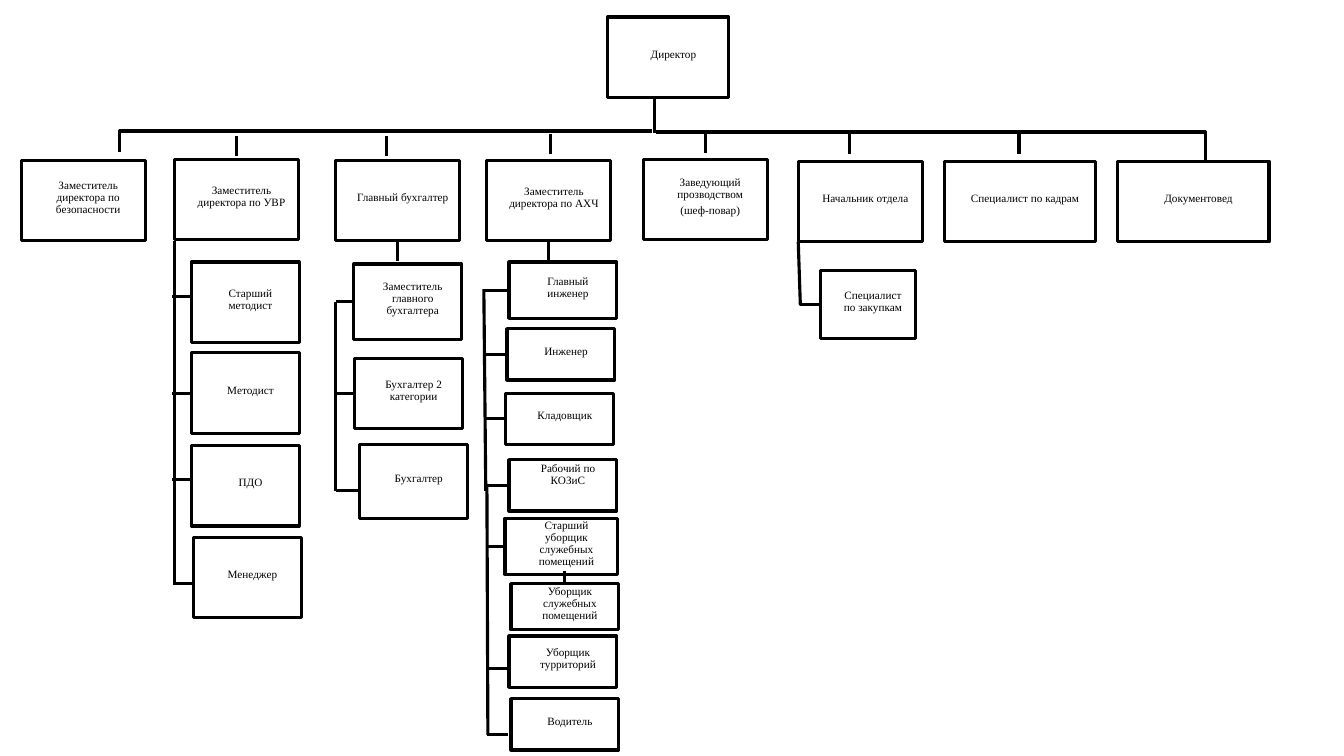
from lxml import etree
from pptx import Presentation
from pptx.dml.color import RGBColor
from pptx.enum.shapes import MSO_CONNECTOR, MSO_SHAPE
from pptx.enum.text import MSO_ANCHOR, PP_ALIGN
from pptx.oxml.ns import qn
from pptx.util import Pt

RECT = MSO_SHAPE.RECTANGLE
STRAIGHT, ELBOW = MSO_CONNECTOR.STRAIGHT, MSO_CONNECTOR.ELBOW
MIDDLE, CENTER = MSO_ANCHOR.MIDDLE, PP_ALIGN.CENTER
TOP, LEFT, BOTTOM = 0, 1, 2
COLORS = {"paper": "FFFFFF", "ink": "000000"}


def color(name):
    return RGBColor.from_string(COLORS[name])


def write(tf, text, font="Times New Roman", size=8, ink="ink", leading=0.9, after=2.8):
    for i, words in enumerate(text.split("\n")):
        p = tf.add_paragraph() if i else tf.paragraphs[0]
        p.alignment = CENTER
        p.line_spacing = leading
        p.space_after = Pt(after)
        r = p.add_run()
        r.text = words
        r.font.name = font
        r.font.size = Pt(size)
        r.font.color.rgb = color(ink)


class OrgChart:
    """Draws the boxes and lines of an organisation chart on one slide."""

    weight = 2.25

    def __init__(self, slide):
        self.s = slide

    def box(self, text, x, y, w, h, bottom=4.3):
        sp = self.s.shapes.add_shape(RECT, Pt(x), Pt(y), Pt(w), Pt(h))
        sp.shadow.inherit = False
        sp.fill.solid()
        sp.fill.fore_color.rgb = color("paper")
        sp.line.color.rgb = color("ink")
        sp.line.width = Pt(self.weight)
        tf = sp.text_frame
        tf.word_wrap = True
        tf.vertical_anchor = MIDDLE
        tf.margin_left, tf.margin_right = Pt(14.4), Pt(7.2)
        tf.margin_top, tf.margin_bottom = Pt(0.7), Pt(bottom)
        write(tf, text)
        return sp

    def line(self, x1, y1, x2, y2, kind=STRAIGHT):
        c = self.s.shapes.add_connector(kind, Pt(x1), Pt(y1), Pt(x2), Pt(y2))
        c.line.color.rgb = color("ink")
        c.line.width = Pt(self.weight)
        etree.SubElement(c._element.spPr, qn("a:effectLst"))
        return c

    def elbow(self, x1, y1, x2, y2, bend):
        c = self.line(x1, y1, x2, y2, ELBOW)
        geom = c._element.spPr.find(qn("a:prstGeom"))
        guides = geom.find(qn("a:avLst"))
        if guides is None:
            guides = etree.SubElement(geom, qn("a:avLst"))
        etree.SubElement(guides, qn("a:gd"), name="adj1", fmla=f"val {bend}")

    def twig(self, x, sp):
        y = (sp.top + sp.height / 2) / Pt(1)
        self.line(x, y, sp.left / Pt(1), y).end_connect(sp, LEFT)

    def stem(self, sp, length):
        x = (sp.left + sp.width / 2) / Pt(1)
        y = (sp.top + sp.height) / Pt(1)
        self.line(x, y, x, y + length).begin_connect(sp, BOTTOM)


def main():
    prs = Presentation()
    prs.slide_width, prs.slide_height = Pt(960), Pt(540)
    chart = OrgChart(prs.slides.add_slide(prs.slide_layouts[6]))

    chart.box("Директор", 434.2, 12.2, 86.4, 57.6)
    heads = [
        ("Заместитель директора по безопасности", 15.1, 114.5, 88.6),
        ("Заместитель директора по УВР", 124.6, 113.8, 88.6),
        ("Главный бухгалтер", 239.8, 114.5, 88.6),
        ("Заместитель директора по АХЧ", 347.8, 114.5, 88.6),
        ("Заведующий прозводством\n(шеф-повар)", 459.4, 113.8, 88.6),
        ("Начальник отдела", 570.2, 115.2, 88.6),
        ("Специалист по кадрам", 674.6, 115.2, 108),
        ("Документовед", 798.5, 115.2, 108),
    ]
    _, _, accountant, facilities, *_ = [chart.box(*head, 57.6) for head in heads]

    staff = [
        ("Старший методист", 136.8, 187.2, 77, 57.6),
        ("Методист", 136.8, 252, 77, 57.6),
        ("ПДО", 136.8, 318.2, 77, 57.6),
        ("Менеджер", 138.2, 383.8, 77, 57.6),
        ("Заместитель главного бухгалтера", 252.7, 188.6, 77, 54),
        ("Бухгалтер 2 категории", 253.4, 256.3, 77, 49.7),
        ("Бухгалтер", 257, 317.5, 77, 52.6),
        ("Главный инженер", 363.6, 187.2, 77, 40.3),
        ("Инженер", 362.2, 234.7, 77, 36.7),
        ("Кладовщик", 361.4, 280.8, 77, 36.7),
        ("Рабочий по КОЗиС", 363.6, 328.3, 77, 36.7, 15.3),
        ("Старший уборщик служебных помещений", 360.7, 370.1, 80.6, 40.3),
        ("Уборщик служебных помещений", 365, 416.9, 77, 33.1),
        ("Уборщик турриторий", 363.6, 454.3, 77, 36.7),
        ("Водитель", 365, 499, 77, 36.7),
        ("Специалист по закупкам", 586.1, 193, 67.7, 49),
    ]
    boxes = {person[0]: chart.box(*person) for person in staff}

    chart.line(467.3, 95, 467.3, 69.8)
    chart.elbow(465.8, 93.6, 85.7, 108.7, 100000)
    chart.elbow(468.7, 94.3, 859.7, 114.5, 100300)
    drops = [(169.2, 97.2), (275.8, 97.2), (393.1, 95.8),
             (504, 95), (607, 95.8), (727.9, 95.8)]
    for x, y in drops:
        chart.line(x, y, x, y + 14.4)

    spines = [
        (124.6, 172.1, 124.6, 416.9),
        (239.8, 215.6, 239.8, 350.6),
        (345.6, 206.6, 347, 350.6),
        (347.8, 345.6, 348.5, 524.9),
        (570.2, 172.8, 571.7, 218.2),
    ]
    for spine in spines:
        chart.line(*spine)

    twigs = [
        ("Методист", 123.1),
        ("Заместитель главного бухгалтера", 239.8),
        ("Бухгалтер 2 категории", 239.8),
        ("Главный инженер", 345.6),
        ("Инженер", 346.3),
        ("Кладовщик", 346.3),
        ("Рабочий по КОЗиС", 346.3),
        ("Старший уборщик служебных помещений", 347),
        ("Специалист по закупкам", 571.7),
    ]
    for name, x in twigs:
        chart.twig(x, boxes[name])

    ticks = [(123.1, 138.2, 211.7), (123.1, 138.2, 342.7), (123.8, 139, 416.9),
             (239.8, 257, 350.6), (347.8, 362.9, 477.4), (347.8, 362.9, 524.9)]
    for x1, x2, y in ticks:
        chart.line(x1, y, x2, y)

    for head in (accountant, facilities):
        chart.stem(head, 14.4)
    cleaner = boxes["Уборщик служебных помещений"]
    chart.line(403.5, 408.2, 403.5, 416.9).end_connect(cleaner, TOP)

    prs.save("out.pptx")


if __name__ == "__main__":
    main()
